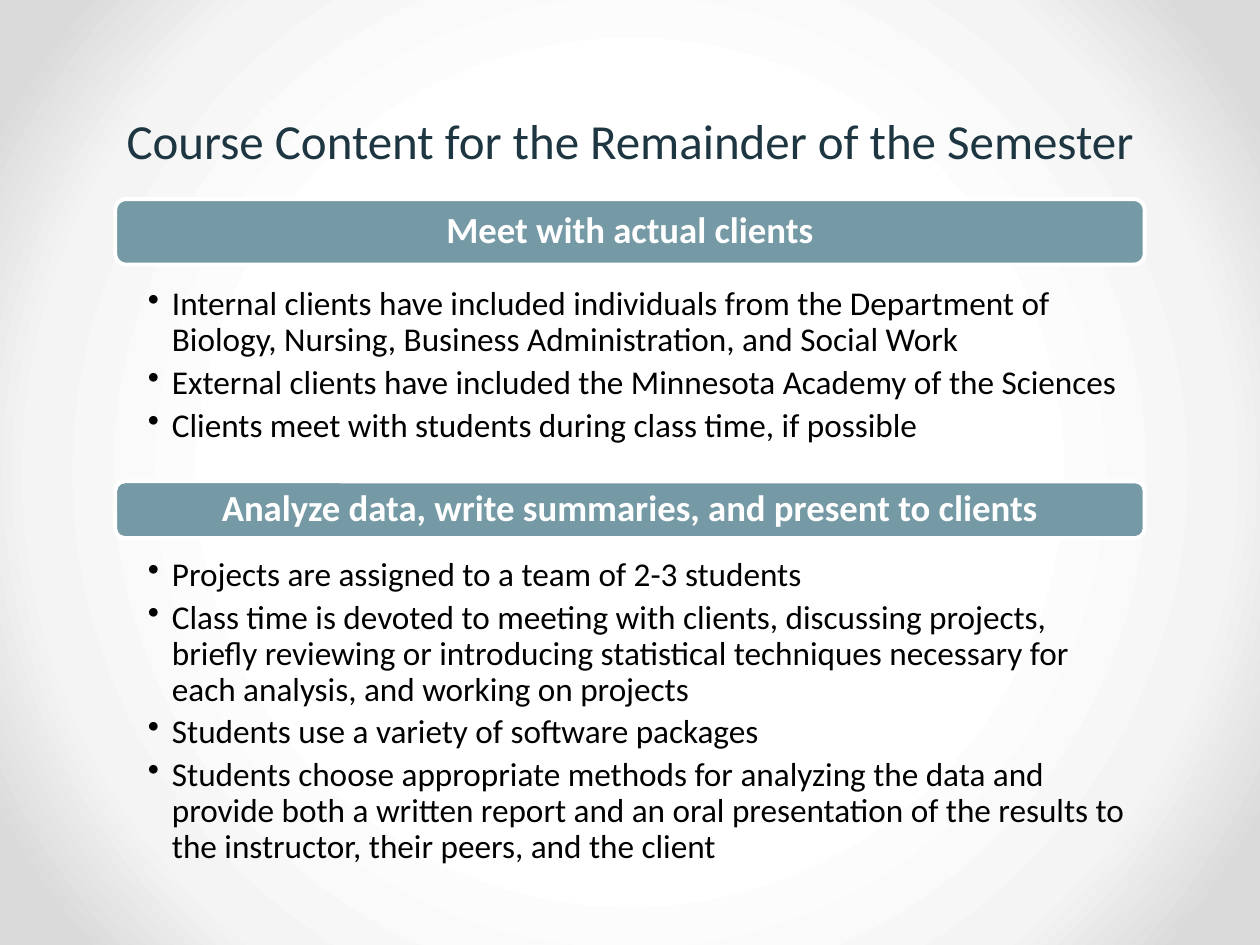
from lxml import etree
from pptx import Presentation
from pptx import util as u
from pptx.dml.color import RGBColor
from pptx.enum import shapes, text
from pptx.oxml.ns import qn

TITLE = "Course Content for the Remainder of the Semester"
# Each section: banner top and height, bullets top and height (inches), wording
SECTIONS = [
    {
        "banner": (1.58, 0.52),
        "body": (2.25, 1.38),
        "heading": "Meet with actual clients",
        "bullets": [
            "Internal clients have included individuals from the Department of "
            "Biology, Nursing, Business Administration, and Social Work",
            "External clients have included the Minnesota Academy of the Sciences",
            "Clients meet with students during class time, if possible",
        ],
    },
    {
        "banner": (3.82, 0.45),
        "body": (4.4, 2.6),
        "heading": "Analyze data, write summaries, and present to clients",
        "bullets": [
            "Projects are assigned to a team of 2-3 students",
            "Class time is devoted to meeting with clients, discussing projects, "
            "briefly reviewing or introducing statistical techniques necessary for "
            "each analysis, and working on projects",
            "Students use a variety of software packages",
            "Students choose appropriate methods for analyzing the data and "
            "provide both a written report and an oral presentation of the results "
            "to the instructor, their peers, and the client",
        ],
    },
]
THEME = {
    "font": "Calibri",
    "title": "1D3641", "banner": "759AA5", "light": "FFFFFF", "body": "000000",
    "title_size": 28, "heading_size": 21, "body_size": 19,
    "backdrop": [(50, "FFFFFF"), (76, "F4F4F4"), (92, "DADADA")],
}
WIDTH, HEIGHT = 10, 7.5
COLUMN_WIDTH = 8.17
COLUMN_LEFT = (WIDTH - COLUMN_WIDTH) / 2
INDENT = 0.19


def color(name):
    return RGBColor.from_string(THEME[name])


def inches(*lengths):
    return [u.Inches(length) for length in lengths]


def write(box, lines, size, ink, bold=False, align=text.PP_ALIGN.LEFT,
          anchor=text.MSO_ANCHOR.TOP, insets=(0.1, 0.05, 0.1, 0.05),
          spacing=1.0, after=0, bullet=None):
    frame = box.text_frame
    frame.word_wrap = True
    frame.vertical_anchor = anchor
    (frame.margin_left, frame.margin_top,
     frame.margin_right, frame.margin_bottom) = inches(*insets)
    for number, line in enumerate(lines):
        para = frame.paragraphs[0] if number == 0 else frame.add_paragraph()
        para.alignment = align
        para.line_spacing = spacing
        para.space_after = u.Pt(after)
        span = para.add_run()
        span.text = line
        span.font.name = THEME["font"]
        span.font.size = u.Pt(THEME[size])
        span.font.bold = bold
        span.font.color.rgb = color(ink)
        if bullet:
            props = para._p.get_or_add_pPr()
            props.set("marL", str(u.Inches(INDENT)))
            props.set("indent", str(-u.Inches(INDENT)))
            etree.SubElement(props, qn("a:buChar"), char=bullet)


def paint_backdrop(page):
    """Fill the background with a circular gradient from the centre."""
    page.background.fill.gradient()
    gradient = next(page._element.iter(qn("a:gradFill")))
    for child in list(gradient):
        gradient.remove(child)
    stops = etree.SubElement(gradient, qn("a:gsLst"))
    for share, shade in THEME["backdrop"]:
        stop = etree.SubElement(stops, qn("a:gs"), pos=str(share * 1000))
        etree.SubElement(stop, qn("a:srgbClr"), val=shade)
    shape = etree.SubElement(gradient, qn("a:path"))
    shape.set("path", "circle")
    etree.SubElement(shape, qn("a:fillToRect"),
                     l="50000", t="50000", r="50000", b="50000")


def add_section(page, section):
    top, height = section["banner"]
    banner = page.shapes.add_shape(
        shapes.MSO_SHAPE.ROUNDED_RECTANGLE,
        *inches(COLUMN_LEFT, top, COLUMN_WIDTH, height))
    banner.shadow.inherit = False
    banner.fill.solid()
    banner.fill.fore_color.rgb = color("banner")
    banner.line.color.rgb = color("light")
    banner.line.width = u.Pt(2.25)
    write(banner, [section["heading"]], "heading_size", "light", bold=True,
          align=text.PP_ALIGN.CENTER, anchor=text.MSO_ANCHOR.MIDDLE,
          insets=(0.09, 0.05, 0.09, 0.05), spacing=0.9)

    top, height = section["body"]
    body = page.shapes.add_textbox(*inches(COLUMN_LEFT, top, COLUMN_WIDTH, height))
    write(body, section["bullets"], "body_size", "body",
          insets=(0.26, 0.03, 0.15, 0.03), spacing=0.9, after=3.8, bullet="•")


def main():
    deck = Presentation()
    deck.slide_width, deck.slide_height = inches(WIDTH, HEIGHT)
    page = deck.slides.add_slide(deck.slide_layouts[6])
    paint_backdrop(page)
    title = page.shapes.add_textbox(*inches(0.5, 0.83, WIDTH - 1, 0.57))
    write(title, [TITLE], "title_size", "title", align=text.PP_ALIGN.CENTER)
    for section in SECTIONS:
        add_section(page, section)
    deck.save("out.pptx")


if __name__ == "__main__":
    main()
